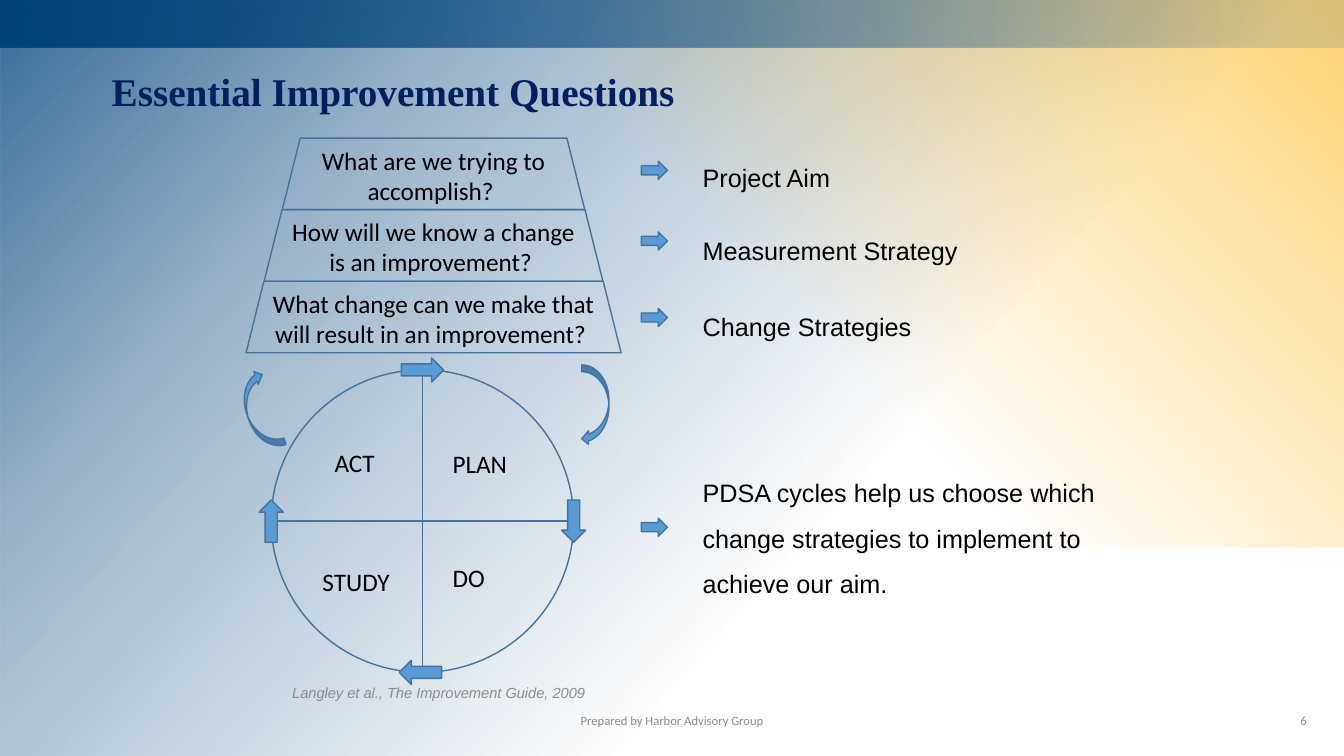
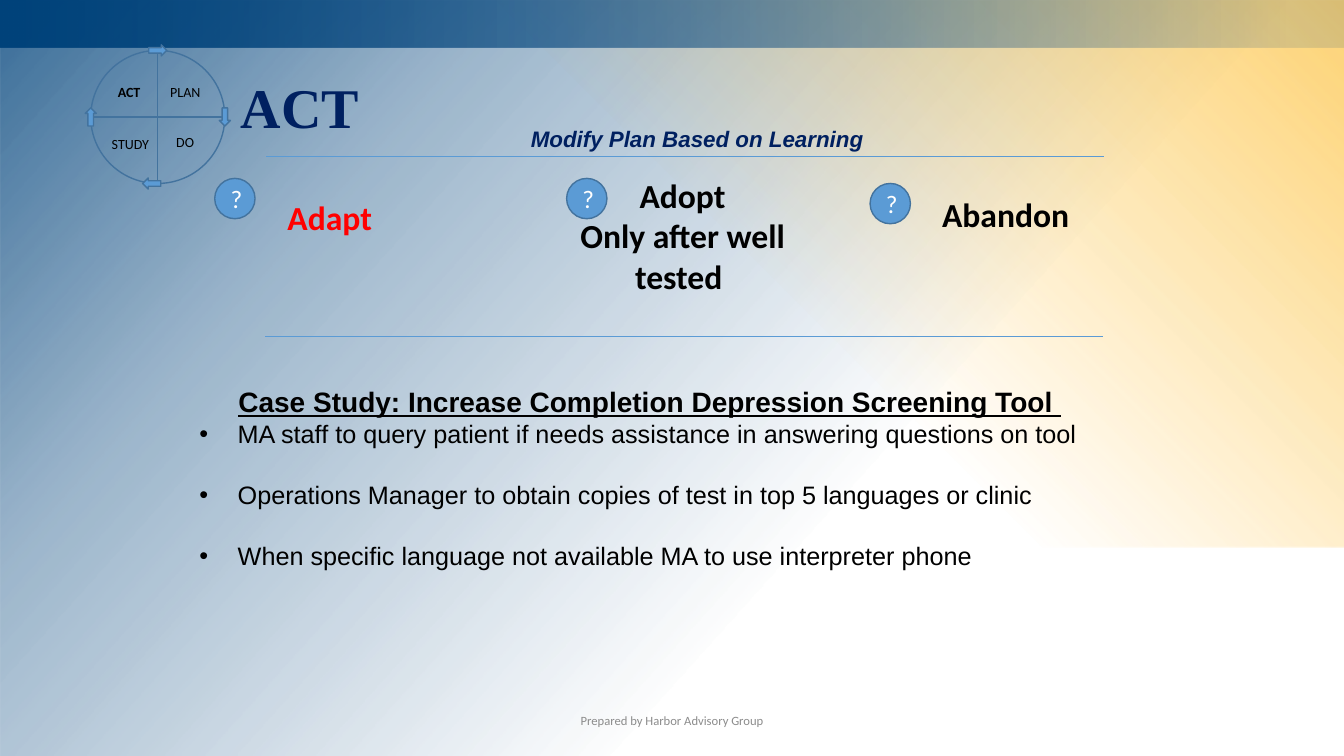
"""Build two slides on improvement questions and the PDSA cycle."""
from math import cos, radians, sin

from lxml.etree import SubElement
from pptx import Presentation
from pptx.dml.color import RGBColor
from pptx.enum.shapes import MSO_CONNECTOR, MSO_SHAPE
from pptx.enum.text import MSO_ANCHOR as ANCHOR, PP_ALIGN as ALIGN
from pptx.oxml.ns import qn
from pptx.util import Inches, Pt

BLUE = RGBColor(0x00, 0x43, 0x7B)
GOLD = RGBColor(0xFD, 0xB5, 0x15)
NAVY = RGBColor(0x00, 0x20, 0x60)
SKY = RGBColor(0x5B, 0x9B, 0xD5)
STEEL = RGBColor(0x43, 0x73, 0x9E)
GRAY = RGBColor(0x8C, 0x8C, 0x8C)
RED = RGBColor(0xFF, 0x00, 0x00)
BLACK = RGBColor(0x00, 0x00, 0x00)
WHITE = RGBColor(0xFF, 0xFF, 0xFF)
SANS, BODY, SERIF = "Arial", "Calibri", "Times New Roman"


def add_preset(slide, preset, box, fill=None, rotation=0):
    shape = slide.shapes.add_shape(preset, *map(Inches, box))
    shape.shadow.inherit = False
    shape.rotation = rotation
    shape.line.color.rgb = STEEL
    shape.line.width = Pt(1)
    if fill is None:
        shape.fill.background()
    else:
        shape.fill.solid()
        shape.fill.fore_color.rgb = fill
    return shape


def add_paragraph(shape, text, size, font=BODY, color=BLACK, bold=False, italic=False,
                  align=ALIGN.LEFT, anchor=ANCHOR.TOP, spacing=None):
    frame = shape.text_frame
    frame.word_wrap = True
    frame.vertical_anchor = anchor
    paragraph = frame.add_paragraph() if frame.text else frame.paragraphs[0]
    paragraph.alignment = align
    if spacing:
        paragraph.line_spacing = spacing
    run = paragraph.add_run()
    run.text = text
    run.font.name = font
    run.font.size = Pt(size)
    run.font.bold = bold
    run.font.italic = italic
    run.font.color.rgb = color
    return paragraph


presentation = Presentation()
presentation.slide_width = Inches(13.33)
presentation.slide_height = Inches(7.5)
blank_layout = presentation.slide_layouts[6]

bands = [
    ((0, 0, 13.33, 7.5), BLUE, 42, [(0, 78), (24, 40), (64, 0)]),
    ((0.75, 0, 12.58, 5.43), GOLD, 135, [(0, 59), (47, 0)]),
    ((0, 0, 13.33, 0.47), BLUE, 0, [(0, 100), (96, 14)]),
]
titles = [
    ("Essential Improvement Questions", (1.01, 0.62, 6.74, 0.57), 28),
    ("ACT", (2.29, 0.67, 5.34, 0.77), 40),
]
for title, title_box, title_size in titles:
    slide = presentation.slides.add_slide(blank_layout)
    for band_box, color, angle, stops in bands:
        band = add_preset(slide, MSO_SHAPE.RECTANGLE, band_box)
        band.line.fill.background()
        band.fill.gradient()
        band.fill.gradient_angle = -angle % 360
        stop_list = band.element.spPr.find(qn("a:gradFill")).find(qn("a:gsLst"))
        stop_list.clear()
        for position, opacity in stops:
            stop = SubElement(stop_list, qn("a:gs"), pos=str(position * 1000))
            stop_color = SubElement(stop, qn("a:srgbClr"), val=str(color))
            SubElement(stop_color, qn("a:alpha"), val=str(opacity * 1000))
    title_shape = slide.shapes.add_textbox(*map(Inches, title_box))
    add_paragraph(title_shape, title, title_size, SERIF, NAVY, bold=True)
    footer = slide.shapes.add_textbox(Inches(5.08), Inches(6.95), Inches(3.17), Inches(0.4))
    add_paragraph(footer, "Prepared by Harbor Advisory Group", 9, color=GRAY,
                  align=ALIGN.CENTER, anchor=ANCHOR.MIDDLE)

questions_slide, act_slide = presentation.slides

cycles = [
    (questions_slide, (2.69, 3.67, 3, 3), (0.42, 0.24), 0.02, 18, (1.2, 0.4),
     [("PLAN", 4.39, 4.4), ("DO", 4.39, 5.53), ("ACT", 3.22, 4.39), ("STUDY", 3.1, 5.57)]),
    (act_slide, (0.9, 0.5, 1.33, 1.32), (0.18, 0.11), 0.06, 10, (0.7, 0.27),
     [("PLAN", 1.59, 0.78), ("DO", 1.65, 1.28), ("ACT", 1.07, 0.78), ("STUDY", 1.01, 1.3)]),
]
for slide, wheel_box, arrow_size, bottom_shift, label_size, label_box, labels in cycles:
    add_preset(slide, MSO_SHAPE.FLOWCHART_OR, wheel_box)
    left, top, width, height = wheel_box
    arrow_width, arrow_height = arrow_size
    for rotation in (0, 90, 180, 270):
        center_x = left + width / 2 * (1 + sin(radians(rotation)))
        center_y = top + height / 2 * (1 - cos(radians(rotation)))
        if rotation == 180:
            center_x -= bottom_shift
        arrow_box = (center_x - arrow_width / 2, center_y - arrow_height / 2, *arrow_size)
        add_preset(slide, MSO_SHAPE.RIGHT_ARROW, arrow_box, SKY, rotation)
    for label, label_left, label_top in labels:
        label_shape = slide.shapes.add_textbox(*map(Inches, (label_left, label_top, *label_box)))
        add_paragraph(label_shape, label, label_size,
                      bold=slide is act_slide and label == "ACT")

questions = [
    "What are we trying to accomplish? ",
    "How will we know a change is an improvement? ",
    "What change can we make that will result in an improvement? ",
]
for row, question in enumerate(questions):
    tier_box = (2.8 - 0.18 * row, 1.37 + 0.71 * row, 3 + 0.36 * row, 0.71)
    tier = add_preset(questions_slide, MSO_SHAPE.TRAPEZOID, tier_box)
    add_paragraph(tier, question, 18, align=ALIGN.CENTER, anchor=ANCHOR.MIDDLE)

answers = [
    ("Project Aim", 1.6, 1.41, 0.56),
    ("Measurement Strategy", 2.3, 2.14, 0.56),
    ("Change Strategies", 3.06, 2.89, 0.56),
    ("PDSA cycles help us choose which change strategies to implement to achieve our aim.",
     5.14, 4.54, 1.46),
]
for answer, arrow_top, text_top, text_height in answers:
    add_preset(questions_slide, MSO_SHAPE.RIGHT_ARROW, (6.36, arrow_top, 0.26, 0.18), SKY)
    answer_shape = questions_slide.shapes.add_textbox(
        Inches(6.87), Inches(text_top), Inches(4.69), Inches(text_height))
    add_paragraph(answer_shape, answer, 18, SANS, spacing=1.5)

add_preset(questions_slide, MSO_SHAPE.CURVED_DOWN_ARROW, (2.18, 3.94, 0.8, 0.27), SKY, 251.1)
add_preset(questions_slide, MSO_SHAPE.CURVED_LEFT_ARROW, (5.77, 3.62, 0.27, 0.8), SKY)

citation = questions_slide.shapes.add_textbox(Inches(2.8), Inches(6.67), Inches(3.17), Inches(0.4))
add_paragraph(citation, "Langley et al., The Improvement Guide, 2009", 10.5, SANS, GRAY,
              italic=True, anchor=ANCHOR.MIDDLE)
page_number = questions_slide.shapes.add_textbox(
    Inches(10.06), Inches(6.95), Inches(3), Inches(0.4))
add_paragraph(page_number, "6", 9, color=GRAY, align=ALIGN.RIGHT, anchor=ANCHOR.MIDDLE)

for rule_left, rule_top in [(2.64, 1.55), (2.63, 3.34)]:
    rule = act_slide.shapes.add_connector(
        MSO_CONNECTOR.STRAIGHT, Inches(rule_left), Inches(rule_top),
        Inches(rule_left + 8.31), Inches(rule_top))
    rule.line.color.rgb = SKY
    rule.line.width = Pt(0.5)
    SubElement(rule.element.spPr, qn("a:effectLst"))

subtitle = act_slide.shapes.add_textbox(Inches(4.89), Inches(1.19), Inches(4.05), Inches(0.37))
add_paragraph(subtitle, "Modify Plan Based on Learning", 16, SANS, NAVY, bold=True,
              italic=True, align=ALIGN.CENTER, anchor=ANCHOR.MIDDLE)

options = [
    (["Adapt"], (2.41, 1.9, 1.72, 0.5), RED, (2.13, 1.77)),
    (["Adopt", "Only after well", "tested "], (5.08, 1.68, 3.38, 1.31), BLACK, (5.62, 1.77)),
    (["Abandon"], (8.94, 1.87, 2.07, 0.5), BLACK, (8.63, 1.82)),
]
for lines, option_box, color, badge_corner in options:
    option = act_slide.shapes.add_textbox(*map(Inches, option_box))
    for line in lines:
        add_paragraph(option, line, 24, color=color, bold=True,
                      align=ALIGN.CENTER, anchor=ANCHOR.MIDDLE)
    badge = add_preset(act_slide, MSO_SHAPE.OVAL, (*badge_corner, 0.4, 0.4), SKY)
    add_paragraph(badge, "?", 18, color=WHITE, align=ALIGN.CENTER, anchor=ANCHOR.MIDDLE)

case_study = act_slide.shapes.add_textbox(Inches(1.88), Inches(3.6), Inches(9.13), Inches(2.42))
heading = add_paragraph(case_study, "Case Study: Increase Completion Depression Screening Tool ",
                        20, SANS, bold=True, align=ALIGN.CENTER, spacing=1.5)
heading.runs[0].font.underline = True
actions = [
    ("MA staff to query patient if needs assistance in answering questions on tool", 0),
    ("Operations Manager to obtain copies of test in top 5 languages or clinic", 22),
    ("When specific language not available MA to use interpreter phone", 22),
]
for action, gap in actions:
    paragraph = add_paragraph(case_study, action, 18, SANS)
    paragraph.space_before = Pt(gap)
    properties = paragraph._p.get_or_add_pPr()
    properties.set("marL", str(Inches(0.38)))
    properties.set("indent", str(-Inches(0.38)))
    SubElement(properties, qn("a:buFont"), typeface=SANS)
    SubElement(properties, qn("a:buChar"), char="•")

presentation.save("out.pptx")
